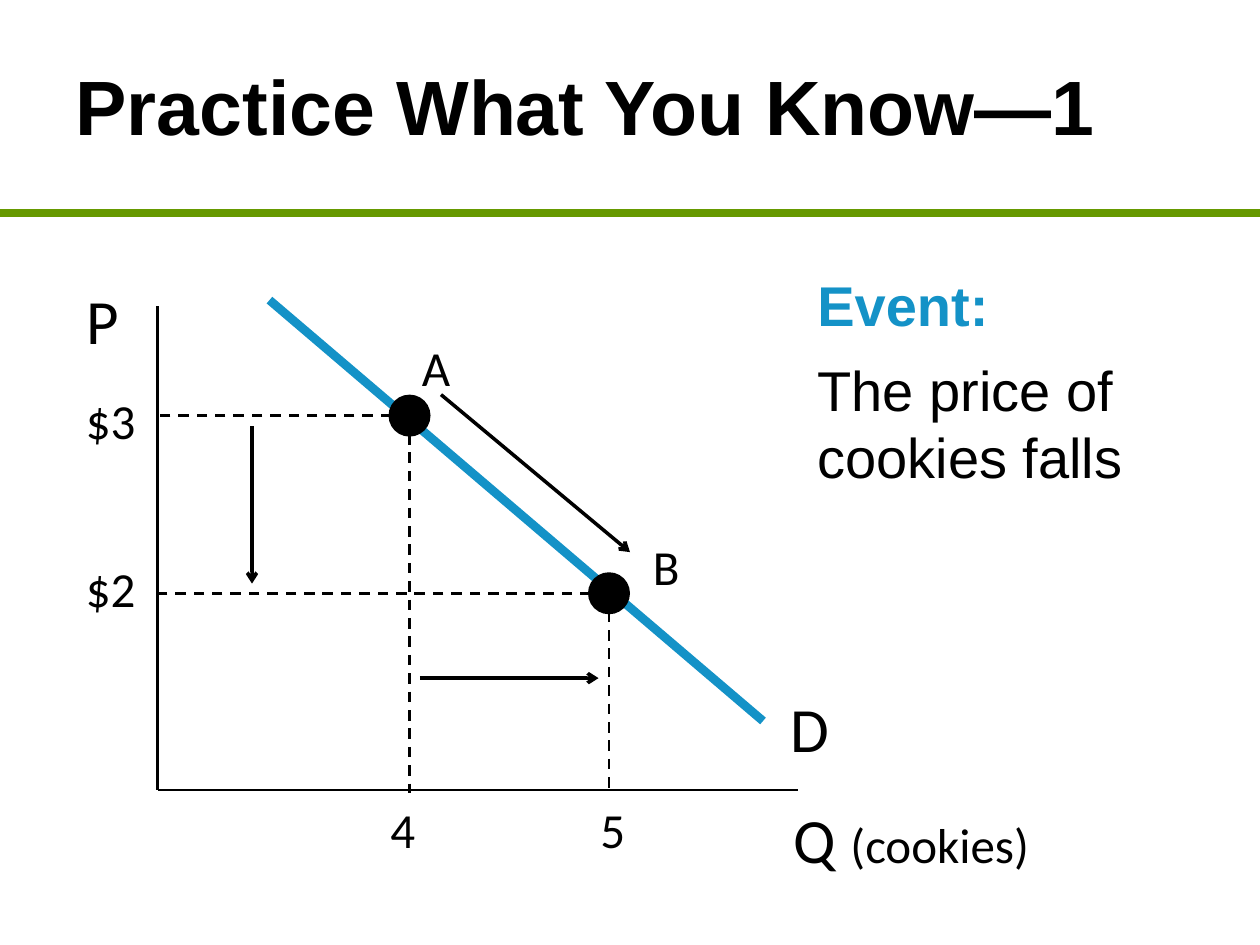
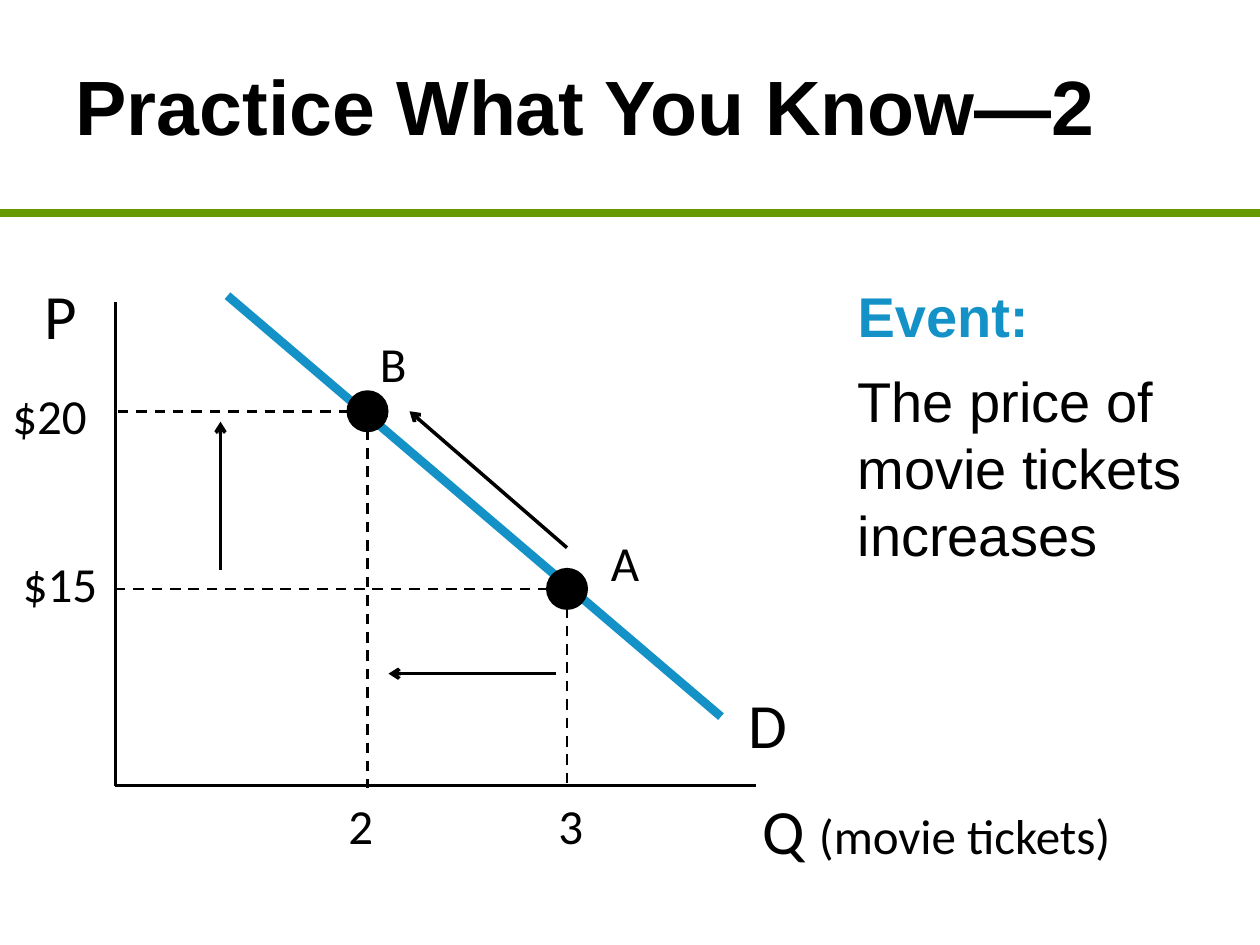
from dataclasses import dataclass

from lxml import etree
from pptx import Presentation
from pptx.dml.color import RGBColor
from pptx.enum import dml, shapes, text
from pptx.oxml import ns
from pptx.util import Pt

COLORS = {"ink": "000000", "demand": "1492C7", "rule": "669900"}
HEADING_FONT, GRAPH_FONT = "Arial", "Calibri"
DOT_SIZE = 24

# Graph geometry, in points right of and below the origin of the axes
AXIS_TOP, AXIS_RIGHT = -276.5, 366
DEMAND_START, DEMAND_END = (64, -280), (346, -39.5)
POINTS = ((144, -214), (258, -112.5))
POINT_NAME_OFFSETS = ((144, -262), (276, -148.5))
PRICE_TOPS = (-232, -136)
QUANTITY_OFFSETS = ((126, 2), (246, 2))


@dataclass
class Exercise:
    title: str
    origin: tuple
    good: str
    good_offset: tuple
    event: str
    event_frame: tuple
    point_names: tuple  # upper point, then lower point
    prices: tuple
    price_lefts: tuple
    quantities: tuple
    arrows: tuple  # along the curve, along prices, along quantities


EXERCISES = [
    Exercise(
        "Practice What You Know—1", (90, 451.5),
        "(cookies)", (360, 4.3),
        "The price of cookies falls", (460, 151, 225, 138),
        ("A", "B"), ("$3", "$2"), (-48, -48), ("4", "5"),
        (((162, -226), (270, -136)),
         ((54, -208), (54, -118)),
         ((150, -64), (252, -64)))),
    Exercise(
        "Practice What You Know—2", (66, 449),
        "(movie tickets)", (366, 1.7),
        "The price of movie tickets increases", (483, 157.5, 208, 174),
        ("B", "A"), ("$20", "$15"), (-66, -60), ("2", "3"),
        (((258, -136), (168, -214)),
         ((60, -123.5), (60, -208)),
         ((252, -64), (156, -64)))),
]


def rgb(name):
    return RGBColor.from_string(COLORS[name])


def style(span, size, font=GRAPH_FONT, color="ink", bold=False):
    span.font.size = Pt(size)
    span.font.name = font
    span.font.bold = bold
    span.font.color.rgb = rgb(color)


def add_line(page, start, end, width, color="ink", dashed=False, arrow=False):
    line = page.shapes.add_connector(
        shapes.MSO_CONNECTOR.STRAIGHT, *(Pt(value) for value in (*start, *end)))
    line.line.color.rgb = rgb(color)
    line.line.width = Pt(width)
    if dashed:
        line.line.dash_style = dml.MSO_LINE.DASH
    if arrow:
        outline = line.element.spPr.find(ns.qn("a:ln"))
        etree.SubElement(outline, ns.qn("a:tailEnd"), type="arrow")
    etree.SubElement(line.element.spPr, ns.qn("a:effectLst"))
    return line


def add_text_box(page, left, top, width, height, paragraphs, margins=(7.2, 3.6)):
    """Each paragraph is a list of (wording, run style) pairs."""
    box = page.shapes.add_textbox(Pt(left), Pt(top), Pt(width), Pt(height))
    frame = box.text_frame
    frame.word_wrap = True
    frame.margin_left = frame.margin_right = Pt(margins[0])
    frame.margin_top = frame.margin_bottom = Pt(margins[1])
    for index, spans in enumerate(paragraphs):
        para = frame.add_paragraph() if index else frame.paragraphs[0]
        para.space_after = Pt(10)
        for wording, look in spans:
            span = para.add_run()
            span.text = wording
            style(span, **look)


def add_dot(page, x, y):
    dot = page.shapes.add_shape(
        shapes.MSO_SHAPE.OVAL, Pt(x - DOT_SIZE / 2), Pt(y - DOT_SIZE / 2),
        Pt(DOT_SIZE), Pt(DOT_SIZE))
    dot.shadow.inherit = False
    dot.fill.solid()
    dot.fill.fore_color.rgb = rgb("ink")
    dot.line.fill.background()


def set_title(page, wording):
    title = page.shapes.title
    title.left, title.top, title.width, title.height = Pt(36), 0, Pt(648), Pt(120)
    frame = title.text_frame
    frame.text = wording
    frame.auto_size = text.MSO_AUTO_SIZE.NONE
    frame.vertical_anchor = text.MSO_ANCHOR.MIDDLE
    frame.paragraphs[0].alignment = text.PP_ALIGN.LEFT
    style(frame.paragraphs[0].runs[0], 44, HEADING_FONT, bold=True)


def add_graph(page, exercise):
    def place(offset):
        return exercise.origin[0] + offset[0], exercise.origin[1] + offset[1]

    def label(wording, offset, width=54):
        add_text_box(page, *place(offset), width, 42, [[(wording, {"size": 28})]])

    def axis_label(spans, offset, width, height):
        add_text_box(page, *place(offset), width, height, [spans], (3.6, 1.5))

    def draw(start, end, width, **look):
        add_line(page, place(start), place(end), width, **look)

    draw((0, AXIS_TOP), (0, 0), 2)
    draw((AXIS_RIGHT, 0), (0, 0), 1.5)
    draw(DEMAND_START, DEMAND_END, 5, color="demand")
    axis_label([("P", {"size": 36})], (-44, -292.4), 44, 32)
    axis_label([("D", {"size": 36})], (358, -59), 72, 50)
    axis_label([("Q ", {"size": 36}), (exercise.good, {"size": 28})],
               exercise.good_offset, 272, 35)

    for x, y in POINTS:
        add_dot(page, *place((x, y)))
        draw((x, y), (0, y), 1.5, dashed=True)
        draw((x, y), (x, 1.5), 1.5, dashed=True)
    for price, offset in zip(exercise.prices, zip(exercise.price_lefts, PRICE_TOPS)):
        label(price, offset, 60)
    for quantity, offset in zip(exercise.quantities, QUANTITY_OFFSETS):
        label(quantity, offset)
    for name, offset in zip(exercise.point_names, POINT_NAME_OFFSETS):
        label(name, offset, 42)
    for start, end in exercise.arrows:
        draw(start, end, 2, arrow=True)


def add_event(page, exercise):
    heading = {"size": 32, "font": HEADING_FONT, "color": "demand", "bold": True}
    body = {"size": 32, "font": HEADING_FONT}
    add_text_box(page, *exercise.event_frame,
                 [[("Event:", heading)], [(exercise.event, body)]])


def move_to_layout(line, layout):
    """Let every slide of the layout share the line."""
    layout.shapes.element.append(line.element)


def main():
    deck = Presentation()
    deck.slide_width, deck.slide_height = Pt(720), Pt(540)
    layout = deck.slide_layouts.get_by_name("Title Only")
    for number, exercise in enumerate(EXERCISES):
        page = deck.slides.add_slide(layout)
        if number == 0:
            rule = add_line(page, (0, 121.5), (720, 121.5), 4.5, "rule")
            move_to_layout(rule, layout)
        set_title(page, exercise.title)
        add_graph(page, exercise)
        add_event(page, exercise)
    deck.save("out.pptx")


if __name__ == "__main__":
    main()
